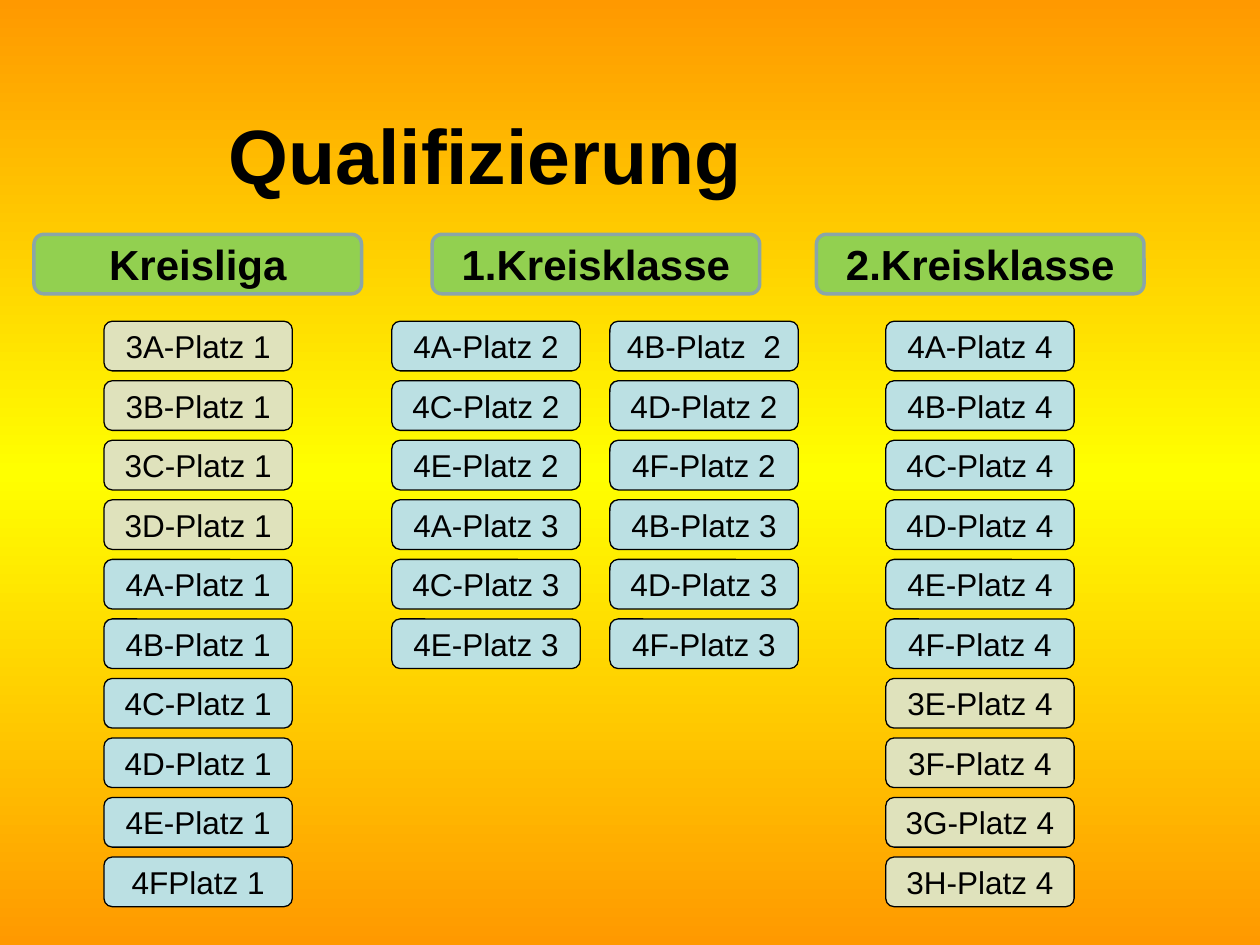
from copy import deepcopy

from pptx import Presentation
from pptx import util as u
from pptx.dml.color import RGBColor
from pptx.enum import shapes, text

COLORS = {
    "text": "000000",
    "edge": "FF9900",
    "middle": "FFFF00",
    "league": "92D050",
    "league_line": "8AA6A8",
    "3": "DFE2BC",
    "4": "BBE0E3",
}

LEAGUES = [(2.7, "Kreisliga"), (34.3, "1.Kreisklasse"), (64.8, "2.Kreisklasse")]

PLACES = [
    (8.25, ["3A-Platz 1", "3B-Platz 1", "3C-Platz 1", "3D-Platz 1", "4A-Platz 1",
            "4B-Platz 1", "4C-Platz 1", "4D-Platz 1", "4E-Platz 1", "4FPlatz 1"]),
    (31.1, ["4A-Platz 2", "4C-Platz 2", "4E-Platz 2",
            "4A-Platz 3", "4C-Platz 3", "4E-Platz 3"]),
    (48.4, ["4B-Platz  2", "4D-Platz 2", "4F-Platz 2",
            "4B-Platz 3", "4D-Platz 3", "4F-Platz 3"]),
    (70.3, ["4A-Platz 4", "4B-Platz 4", "4C-Platz 4", "4D-Platz 4", "4E-Platz 4",
            "4F-Platz 4", "3E-Platz 4", "3F-Platz 4", "3G-Platz 4", "3H-Platz 4"]),
]
FIRST_ROW, ROW_STEP = 34, 6.3


def rgb(name):
    return RGBColor.from_string(COLORS[name])


class Board:
    """Draws styled elements on a page, with lengths in percent of its size."""

    font_name = "Arial"

    def __init__(self, deck):
        self.deck = deck
        self.page = deck.slides.add_slide(deck.slide_layouts[6])

    def area(self, left, top, width, height):
        across, down = self.deck.slide_width, self.deck.slide_height
        return [u.Emu(round(share * size / 100)) for share, size in
                ((left, across), (top, down), (width, across), (height, down))]

    def background(self, *names):
        fill = self.page.background.fill
        fill.gradient()
        fill.gradient_angle = 270
        stops = self.page._element.xpath(".//a:gsLst")[0]
        stops.insert(1, deepcopy(stops[0]))
        for index, (stop, name) in enumerate(zip(fill.gradient_stops, names)):
            stop.color.rgb = rgb(name)
            stop.position = index / (len(names) - 1)

    def label(self, box, words, size, bold=False, wrap=True):
        frame = box.text_frame
        frame.word_wrap = wrap
        frame.vertical_anchor = text.MSO_ANCHOR.MIDDLE
        para = frame.paragraphs[0]
        para.alignment = text.PP_ALIGN.CENTER
        span = para.add_run()
        span.text = words
        span.font.name = self.font_name
        span.font.size = u.Pt(size)
        span.font.bold = bold
        span.font.color.rgb = rgb("text")

    def panel(self, kind, area, fill, line, weight):
        box = self.page.shapes.add_shape(kind, *self.area(*area))
        box.shadow.inherit = False
        box.fill.solid()
        box.fill.fore_color.rgb = rgb(fill)
        box.line.color.rgb = rgb(line)
        box.line.width = u.Pt(weight)
        return box

    def title(self, words):
        box = self.page.shapes.add_textbox(*self.area(3.9, 10.5, 69.3, 11.6))
        self.label(box, words, 44, bold=True)

    def league(self, left, words):
        box = self.panel(shapes.MSO_SHAPE.ROUNDED_RECTANGLE, (left, 24.8, 26, 6.3),
                         "league", "league_line", 2)
        self.label(box, words, 24, bold=True)

    def place(self, left, row, words):
        top = FIRST_ROW + row * ROW_STEP
        box = self.panel(shapes.MSO_SHAPE.FLOWCHART_ALTERNATE_PROCESS,
                         (left, top, 14.95, 5.25), words[0], "text", 0.75)
        self.label(box, words, 18, wrap=False)


def main():
    deck = Presentation()
    deck.slide_width, deck.slide_height = u.Inches(10), u.Inches(7.5)
    board = Board(deck)
    board.background("edge", "middle", "edge")
    board.title("Qualifizierung")
    for left, places in PLACES:
        for row, words in enumerate(places):
            board.place(left, row, words)
    for left, words in LEAGUES:
        board.league(left, words)
    deck.save("out.pptx")


if __name__ == "__main__":
    main()
